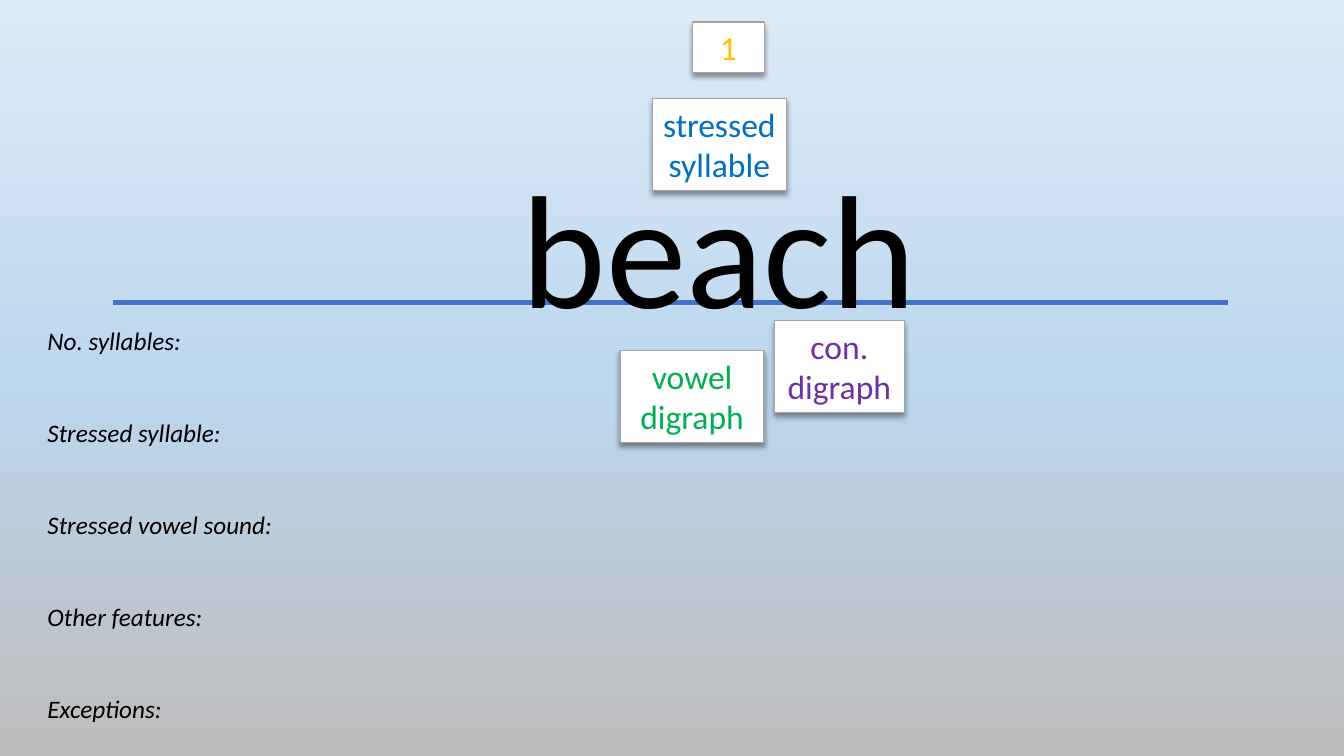
from copy import deepcopy

from lxml.etree import SubElement
from pptx import Presentation
from pptx.dml.color import RGBColor
from pptx.enum.shapes import MSO_CONNECTOR, MSO_SHAPE
from pptx.enum.text import MSO_ANCHOR, MSO_AUTO_SIZE, PP_ALIGN
from pptx.oxml.ns import qn
from pptx.util import Inches, Pt


def colour(hex_string):
    return RGBColor.from_string(hex_string)


class WordSlide:
    """A slide that takes one word apart, with its style."""

    font = "Calibri"
    ink = "000000"
    paper = "FFFFFF"
    border = "A5A5A5"
    rule = "4472C4"
    sky = [(0, "DEEBF7"), (0.5, "BDD7EE"), (1, "BDBCBC")]

    def __init__(self, deck):
        self.page = deck.slides.add_slide(deck.slide_layouts[1])
        self.shapes = self.page.shapes

    def background(self):
        fill = self.page.background.fill
        fill.gradient()
        fill.gradient_angle = 270
        stop_list = self.page.element.find(".//" + qn("a:gsLst"))
        stop_list.append(deepcopy(stop_list[-1]))
        for stop, (position, shade) in zip(fill.gradient_stops, self.sky):
            stop.position = position
            stop.color.rgb = colour(shade)

    def add_text(self, box, lines, size, shade, align, italic=False, gap=0):
        frame = box.text_frame
        frame.word_wrap = True
        frame.auto_size = MSO_AUTO_SIZE.NONE
        frame.vertical_anchor = MSO_ANCHOR.TOP
        for index, line in enumerate(lines):
            para = frame.add_paragraph() if index else frame.paragraphs[0]
            para.alignment = align
            para.space_before = Pt(0)
            para.space_after = Pt(gap if index < len(lines) - 1 else 0)
            span = para.add_run()
            span.text = line
            span.font.name = self.font
            span.font.size = Pt(size)
            span.font.italic = italic
            span.font.color.rgb = colour(shade)

    def place(self, box, left, top, width, height):
        """Move a placeholder and bring it to the front."""
        box.left, box.top = Inches(left), Inches(top)
        box.width, box.height = Inches(width), Inches(height)
        box.element.getparent().append(box.element)

    def word(self, text, *area):
        title = self.shapes.title
        self.place(title, *area)
        self.add_text(title, [text], 115, self.ink, PP_ALIGN.CENTER)

    def prompts(self, lines, *area):
        body = self.page.placeholders[1]
        self.place(body, *area)
        self.add_text(body, lines, 18, self.ink, PP_ALIGN.LEFT,
                      italic=True, gap=44)
        for properties in body.element.iter(qn("a:pPr")):
            properties.set("marL", "0")
            properties.set("indent", "0")
            SubElement(properties, qn("a:buNone"))

    def line(self, left, right, height):
        line = self.shapes.add_connector(
            MSO_CONNECTOR.STRAIGHT,
            Inches(left), Inches(height), Inches(right), Inches(height))
        line.line.color.rgb = colour(self.rule)
        line.line.width = Pt(3)
        SubElement(line.element.spPr, qn("a:effectLst"))

    def card(self, lines, shade, *area):
        card = self.shapes.add_shape(MSO_SHAPE.RECTANGLE, *map(Inches, area))
        card.fill.solid()
        card.fill.fore_color.rgb = colour(self.paper)
        card.line.color.rgb = colour(self.border)
        card.line.width = Pt(1)
        self.drop_shadow(card)
        self.add_text(card, lines, 24, shade, PP_ALIGN.CENTER)

    def drop_shadow(self, card):
        card.shadow.inherit = False
        effects = card.element.spPr.find(qn("a:effectLst"))
        shadow = SubElement(effects, qn("a:outerShdw"), {
            "blurRad": str(Pt(4)), "dist": str(Pt(3)),
            "dir": "5400000", "rotWithShape": "0"})
        tint = SubElement(shadow, qn("a:srgbClr"), val=self.ink)
        SubElement(tint, qn("a:alpha"), val="40000")


def main():
    deck = Presentation()
    deck.slide_width, deck.slide_height = Inches(13.33), Inches(7.5)

    slide = WordSlide(deck)
    slide.background()
    slide.card(["stressed", "syllable"], "0070C0", 6.47, 0.98, 1.33, 0.91)
    slide.card(["vowel", "digraph"], "00B050", 6.15, 3.48, 1.43, 0.91)
    slide.line(1.12, 12.18, 3)
    slide.word("beach", 2.21, 1.41, 9.84, 2.04)
    slide.card(["1"], "FFC000", 6.87, 0.22, 0.71, 0.5)
    slide.prompts(
        ["No. syllables:", "Stressed syllable:", "Stressed vowel sound:",
         "Other features:", "Exceptions:"],
        0.37, 3.18, 2.45, 4.04)
    slide.card(["con. digraph"], "7030A0", 7.68, 3.18, 1.29, 0.91)
    deck.save("out.pptx")


if __name__ == "__main__":
    main()
